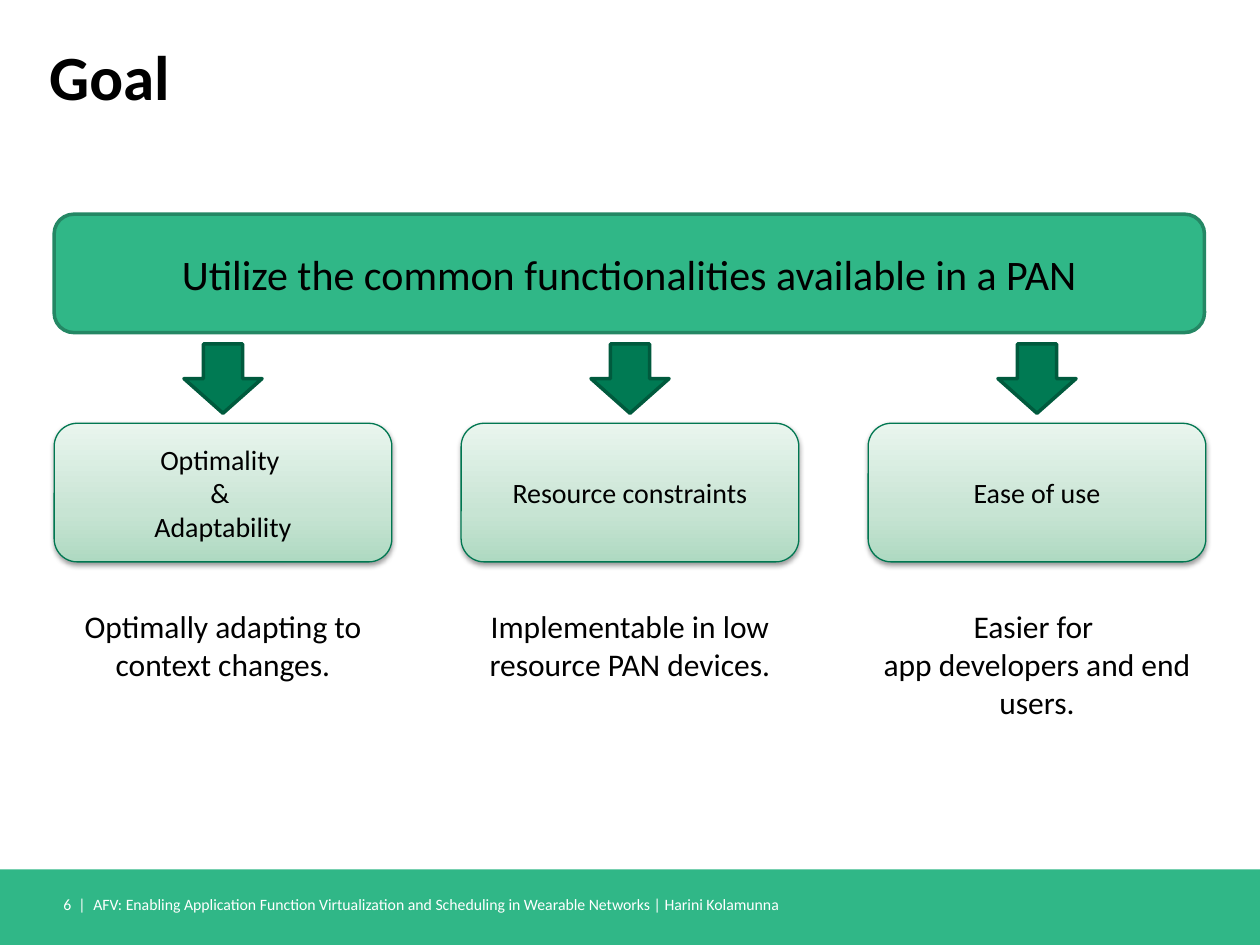
from copy import deepcopy

from lxml import etree
from pptx import Presentation
from pptx.dml.color import RGBColor
from pptx.enum import shapes, text
from pptx.oxml import ns
from pptx.util import Inches, Pt

COLORS = {
    "black": "000000", "white": "FFFFFF",
    "green": "30B787", "green edge": "248764",
    "arrow": "007A53", "arrow edge": "005A3D", "card edge": "007751",
}
CARD_GRADIENT = [(0, "AED9C1"), (0.35, "C7E4D3"), (1, "E9F5EE")]
FONT = "Calibri"
SHAPE = shapes.MSO_SHAPE
ALIGN = text.PP_ALIGN


def add_block(kind, left, top, width, height, fill=None, edge=None, weight=0):
    block = slide.shapes.add_shape(
        kind, Inches(left), Inches(top), Inches(width), Inches(height))
    block.shadow.inherit = False
    if fill:
        block.fill.solid()
        block.fill.fore_color.rgb = RGBColor.from_string(COLORS[fill])
    if edge:
        block.line.color.rgb = RGBColor.from_string(COLORS[edge])
        block.line.width = Pt(weight)
    else:
        block.line.fill.background()
    return block


def write(frame, content, size, color="black", align=ALIGN.CENTER,
          anchor=text.MSO_ANCHOR.MIDDLE, bold=False, flush=False):
    """Fill a text frame, one paragraph per line; flush removes its margins."""
    frame.text = content
    frame.word_wrap = True
    frame.vertical_anchor = anchor
    if flush:
        frame.margin_left = frame.margin_right = 0
        frame.margin_top = frame.margin_bottom = 0
    for paragraph in frame.paragraphs:
        paragraph.alignment = align
        paragraph.font.name = FONT
        paragraph.font.size = Pt(size)
        paragraph.font.bold = bold
        paragraph.font.color.rgb = RGBColor.from_string(COLORS[color])


prs = Presentation()
prs.slide_width, prs.slide_height = Inches(10), Inches(7.5)
slide = prs.slides.add_slide(prs.slide_layouts[5])

# Title
title = slide.shapes.title
title.left, title.top = Inches(0.39), Inches(0.3)
title.width, title.height = Inches(7.68), Inches(0.93)
write(title.text_frame, "Goal", 36, align=ALIGN.LEFT,
      anchor=text.MSO_ANCHOR.TOP, bold=True, flush=True)

# Footer band
add_block(SHAPE.RECTANGLE, 0, 6.9, 10, 0.6, "green")
footer_parts = [
    (0.36, 0.32, "6  |", ALIGN.RIGHT),
    (0.74, 6.65, "AFV: Enabling Application Function Virtualization and "
     "Scheduling in Wearable Networks | Harini Kolamunna", ALIGN.LEFT),
]
for left, width, content, align in footer_parts:
    footer = slide.shapes.add_textbox(
        Inches(left), Inches(7.11), Inches(width), Inches(0.14))
    write(footer.text_frame, content, 9, "white", align, flush=True)

# Main goal
goal = add_block(SHAPE.ROUNDED_RECTANGLE, 0.43, 1.7, 9.13, 0.94,
                 "green", "green edge", 2)
write(goal.text_frame, "Utilize the common functionalities available in a PAN", 24)

# Three aspects: arrow, card and explanation in each column
aspects = [
    ("Optimality \n& \nAdaptability", "Optimally adapting to context changes.", 0.71),
    ("Resource constraints", "Implementable in low resource PAN devices.", 0.71),
    ("Ease of use", "Easier for \napp developers and end users.", 1.01),
]
card_width, arrow_width, pitch = 2.68, 0.62, 3.23
for column, (heading, explanation, height) in enumerate(aspects):
    left = 0.43 + column * pitch
    add_block(SHAPE.DOWN_ARROW, left + (card_width - arrow_width) / 2, 2.73,
              arrow_width, 0.55, "arrow", "arrow edge", 2)

    card = add_block(SHAPE.ROUNDED_RECTANGLE, left, 3.36, card_width, 1.1,
                     edge="card edge", weight=0.75)
    card.fill.gradient()
    card.fill.gradient_angle = 90
    properties = card._element.spPr
    stop_list = properties.find(".//" + ns.qn("a:gsLst"))
    stop_list.insert(1, deepcopy(stop_list[0]))
    for stop, (position, color) in zip(card.fill.gradient_stops, CARD_GRADIENT):
        stop.position = position
        stop.color.rgb = RGBColor.from_string(color)
    shadow = etree.SubElement(
        properties.find(ns.qn("a:effectLst")), ns.qn("a:outerShdw"),
        blurRad=str(Pt(3.1)), dist=str(Pt(1.6)), dir="5400000", rotWithShape="0")
    shade = etree.SubElement(shadow, ns.qn("a:srgbClr"), val=COLORS["black"])
    etree.SubElement(shade, ns.qn("a:alpha"), val="38000")
    write(card.text_frame, heading, 16)

    note = slide.shapes.add_textbox(
        Inches(left), Inches(4.77), Inches(card_width), Inches(height))
    write(note.text_frame, explanation, 18, anchor=text.MSO_ANCHOR.TOP)
    note.text_frame.auto_size = text.MSO_AUTO_SIZE.SHAPE_TO_FIT_TEXT

prs.save("out.pptx")
